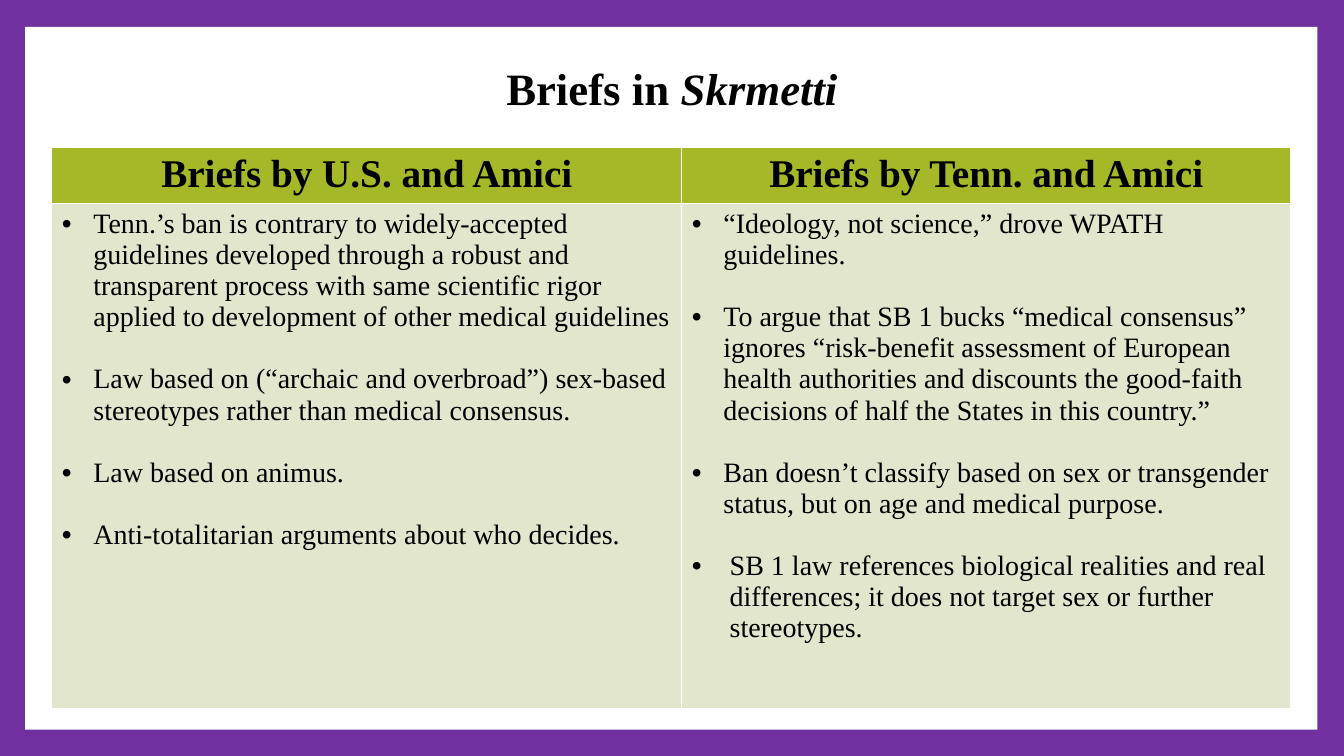
import pptx
import pptx.dml.color
import pptx.enum.shapes
import pptx.enum.text
import pptx.oxml
import pptx.oxml.ns
import pptx.util

Pt = pptx.util.Pt
ALIGN = pptx.enum.text.PP_ALIGN
ANCHOR = pptx.enum.text.MSO_ANCHOR

BRIEFS = {
    "Briefs by U.S. and Amici": [
        "Tenn.’s ban is contrary to widely-accepted guidelines developed through a robust and transparent "
        "process with same scientific rigor applied to development of other medical guidelines",
        "Law based on (“archaic and overbroad”) sex-based stereotypes rather than medical consensus.",
        "Law based on animus.",
        "Anti-totalitarian arguments about who decides.",
    ],
    "Briefs by Tenn. and Amici": [
        "“Ideology, not science,” drove WPATH guidelines.",
        "To argue that SB 1 bucks “medical consensus” ignores “risk-benefit assessment of European health "
        "authorities and discounts the good-faith decisions of half the States in this country.”",
        "Ban doesn’t classify based on sex or transgender status, but on age and medical purpose.",
        "SB 1 law references biological realities and real differences; it does not target sex or further "
        "stereotypes.",
    ],
}
WIDE_INDENT = 27
INDENT = 22.5


def color(hex_string):
    return pptx.dml.color.RGBColor.from_string(hex_string)


def paint(fill, hex_string):
    fill.solid()
    fill.fore_color.rgb = color(hex_string)


def write(paragraph, text, size=20, bold=False, italic=False, align=ALIGN.LEFT, font="Times New Roman", ink="000000"):
    paragraph.alignment = align
    run = paragraph.add_run()
    run.text = text
    run.font.name = font
    run.font.size = Pt(size)
    run.font.bold = bold
    run.font.italic = italic
    run.font.color.rgb = color(ink)


def add_xml(parent, position, xml):
    namespace = pptx.oxml.ns.nsdecls("a")
    parent.insert(position, pptx.oxml.parse_xml(xml.replace(">", f" {namespace}>", 1)))


class SlideBuilder:
    """Holds the colours and the current slide, and adds each kind of element."""

    frame = "7030A0"
    paper = "FFFFFF"
    header = "A6B727"
    body = "E1E6CD"

    def __init__(self, presentation):
        self.slide = presentation.slides.add_slide(presentation.slide_layouts[5])
        paint(self.slide.background.fill, self.frame)

    def panel(self, left, top, width, height):
        shape = self.slide.shapes.add_shape(
            pptx.enum.shapes.MSO_SHAPE.RECTANGLE, Pt(left), Pt(top), Pt(width), Pt(height))
        shape.shadow.inherit = False
        paint(shape.fill, self.paper)
        shape.line.fill.background()
        self.slide.shapes.title._element.addprevious(shape._element)

    def title(self, left, top, width, height, plain, emphasis):
        title = self.slide.shapes.title
        title.left, title.top, title.width, title.height = Pt(left), Pt(top), Pt(width), Pt(height)
        title.text_frame.vertical_anchor = ANCHOR.MIDDLE
        paragraph = title.text_frame.paragraphs[0]
        paragraph.line_spacing = 0.9
        for text, italic in ((plain, False), (emphasis, True)):
            write(paragraph, text, size=32, bold=True, italic=italic, align=ALIGN.CENTER)

    def cell(self, cell, fill):
        paint(cell.fill, fill)
        for position, side in enumerate("LRTB"):
            add_xml(cell._tc.get_or_add_tcPr(), position,
                    f'<a:ln{side} w="12700"><a:solidFill><a:srgbClr val="{self.paper}"/>'
                    f'</a:solidFill></a:ln{side}>')

    def bullet(self, paragraph, text, indent, gap):
        paragraph.space_before = Pt(gap)
        write(paragraph, text)
        properties = paragraph._p.get_or_add_pPr()
        properties.set("marL", str(Pt(indent)))
        properties.set("indent", str(-Pt(indent)))
        add_xml(properties, len(properties), '<a:buFont typeface="Arial"></a:buFont>')
        add_xml(properties, len(properties), '<a:buChar char="•"></a:buChar>')

    def table(self, left, top, widths, heights, columns):
        table = self.slide.shapes.add_table(
            len(heights), len(widths), Pt(left), Pt(top), Pt(sum(widths)), Pt(sum(heights))).table
        table.horz_banding = False
        for row, height in zip(table.rows, heights):
            row.height = Pt(height)
        for index, (heading, points) in enumerate(columns.items()):
            table.columns[index].width = Pt(widths[index])
            head, body = table.cell(0, index), table.cell(1, index)
            self.cell(head, self.header)
            self.cell(body, self.body)
            write(head.text_frame.paragraphs[0], heading, size=28, bold=True, align=ALIGN.CENTER)
            for number, point in enumerate(points):
                frame = body.text_frame
                paragraph = frame.add_paragraph() if number else frame.paragraphs[0]
                indent = WIDE_INDENT if point.startswith("SB 1") else INDENT
                self.bullet(paragraph, point, indent, gap=22.2 if number else 0)


def main():
    presentation = pptx.Presentation()
    presentation.slide_width, presentation.slide_height = Pt(960), Pt(540)
    builder = SlideBuilder(presentation)
    builder.panel(18, 19.2, 923, 502)
    builder.title(66, 25, 828, 80, "Briefs in ", "Skrmetti")
    builder.table(37, 105.4, (450, 435), (40, 360.5), BRIEFS)
    presentation.save("out.pptx")


if __name__ == "__main__":
    main()
